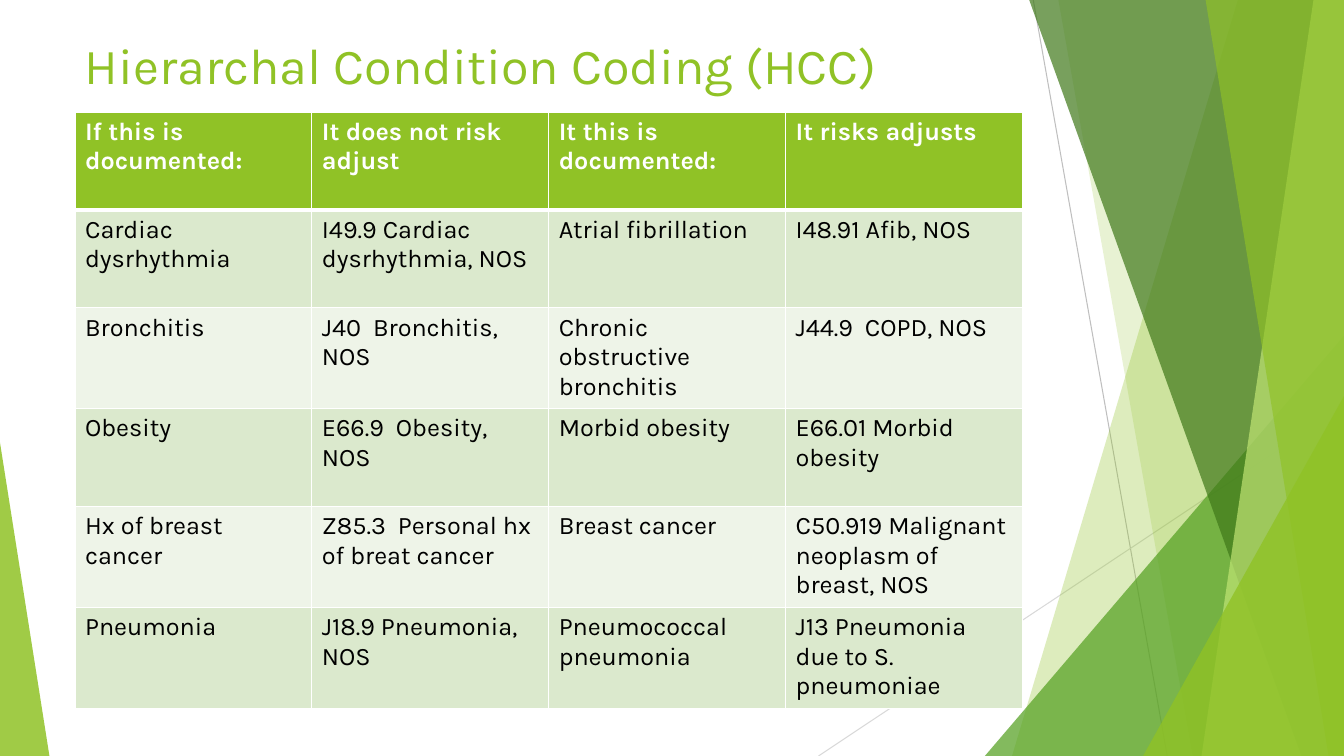
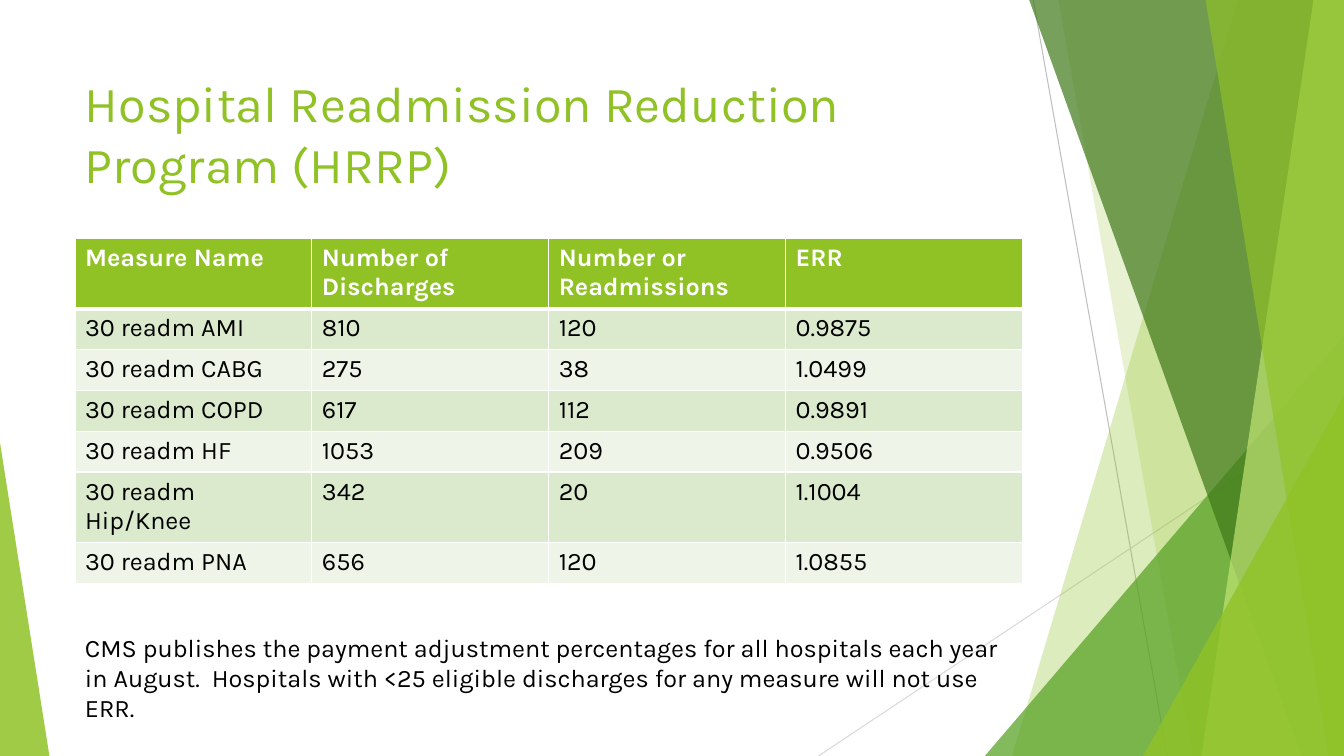
from lxml.etree import SubElement
from pptx import Presentation
from pptx.dml.color import RGBColor
from pptx.enum.shapes import MSO_CONNECTOR, MSO_SHAPE
from pptx.enum.text import MSO_ANCHOR
from pptx.oxml.ns import qn
from pptx.util import Inches, Pt

CODING = [
    ("If this is documented:", "It does not risk adjust", "It this is documented:", "It risks adjusts"),
    ("Cardiac dysrhythmia", "I49.9 Cardiac dysrhythmia, NOS", "Atrial fibrillation", "I48.91 Afib, NOS"),
    ("Bronchitis", "J40  Bronchitis, NOS", "Chronic obstructive bronchitis", "J44.9  COPD, NOS"),
    ("Obesity", "E66.9  Obesity, NOS", "Morbid obesity", "E66.01 Morbid obesity"),
    ("Hx of breast cancer", "Z85.3  Personal hx of breat cancer", "Breast cancer",
     "C50.919 Malignant neoplasm of breast, NOS"),
    ("Pneumonia", "J18.9 Pneumonia, NOS", "Pneumococcal pneumonia", "J13 Pneumonia due to S. pneumoniae"),
]
RATES = [
    ("Measure Name", "Number of Discharges", "Number or Readmissions", "ERR"),
    ("30 readm AMI", "810", "120", "0.9875"),
    ("30 readm CABG", "275", "38", "1.0499"),
    ("30 readm COPD", "617", "112", "0.9891"),
    ("30 readm HF", "1053", "209", "0.9506"),
    ("30 readm Hip/Knee", "342", "20", "1.1004"),
    ("30 readm PNA", "656", "120", "1.0855"),
]
NOTE = ("CMS publishes the payment adjustment percentages for all hospitals each year in August.  "
        "Hospitals with <25 eligible discharges for any measure will not use ERR.")


def tint(code):
    return RGBColor.from_string(code)


def write(frame, text, size=18, color="000000", bold=False, font="Karla"):
    frame.word_wrap = True
    run = frame.paragraphs[0].add_run()
    run.text = text
    run.font.name = font
    run.font.size = Pt(size)
    run.font.bold = bold
    run.font.color.rgb = tint(color)


class Deck:
    lime, leaf, pine, pale, white = "90C226", "54A021", "3F7819", "C0E474", "FFFFFF"
    bands = ("EEF4E8", "DBE9CD")
    left, span = 5.58, 70.5

    def __init__(self):
        self.file = Presentation()
        self.file.slide_width = Inches(13.33)
        self.file.slide_height = Inches(7.5)

    def across(self, share):
        return round(self.file.slide_width * share / 100)

    def down(self, share):
        return round(self.file.slide_height * share / 100)

    def place(self, x, y, wide, high):
        return self.across(x), self.down(y), self.across(wide), self.down(high)

    def page(self, title, top, high):
        self.slide = self.file.slides.add_slide(self.file.slide_layouts[6])
        self.shapes = self.slide.shapes
        self.backdrop()
        self.text(title, top, high, size=36, color=self.lime)

    def backdrop(self):
        self.line(76.88, 0, 86.85, 100, "BFBFBF")
        self.line(100, 53.73, 60.9, 100, "D9D9D9")
        self.shard(92.1, 75.3, self.lime, 30)
        self.shard(78.75, 88.73, self.lime, 20)
        self.wedge(73.28, 44.4, 26.72, self.leaf, 72)
        self.shard(76.58, 96.83, self.pine, 70)
        self.shard(97.73, 89.4, self.pale, 70)
        self.shard(89.7, 98.85, self.lime, 65)
        self.wedge(85.05, 52.4, 14.95, self.lime, 80)
        self.wedge(0, 58.53, 3.68, self.lime, 85, peak=0)

    def line(self, x, y, to_x, to_y, color):
        line = self.shapes.add_connector(
            MSO_CONNECTOR.STRAIGHT, *self.place(x, y, to_x, to_y))
        line.line.color.rgb = tint(color)
        line.line.width = Pt(0.75)
        SubElement(line.element.spPr, qn("a:effectLst"))

    def glaze(self, shape, color, alpha):
        shape.shadow.inherit = False
        shape.fill.solid()
        shape.fill.fore_color.rgb = tint(color)
        shape.line.fill.background()
        shade = next(shape.element.spPr.iter(qn("a:srgbClr")))
        SubElement(shade, qn("a:alpha")).set("val", str(alpha * 1000))

    def shard(self, head, foot, color, alpha):
        start, *rest = [(self.across(x), self.down(y))
                        for x, y in ((head, 0), (100, 0), (100, 100), (foot, 100))]
        path = self.shapes.build_freeform(*start)
        path.add_line_segments(rest, close=True)
        self.glaze(path.convert_to_shape(), color, alpha)

    def wedge(self, x, y, wide, color, alpha, peak=1):
        shape = self.shapes.add_shape(
            MSO_SHAPE.ISOSCELES_TRIANGLE, *self.place(x, y, wide, 100 - y))
        shape.adjustments[0] = peak
        self.glaze(shape, color, alpha)

    def text(self, text, top, high, **style):
        box = self.shapes.add_textbox(*self.place(self.left, top, self.span, high))
        box.text_frame.vertical_anchor = MSO_ANCHOR.TOP
        write(box.text_frame, text, **style)

    def edge(self, cell, side, width):
        line = SubElement(cell._tc.get_or_add_tcPr(), qn("a:ln" + side))
        line.set("w", str(Pt(width)))
        fill = SubElement(line, qn("a:solidFill"))
        SubElement(fill, qn("a:srgbClr")).set("val", self.white)

    def table(self, rows, top, high):
        grid = self.shapes.add_table(
            len(rows), len(rows[0]),
            *self.place(self.left, top, self.span, high * len(rows))).table
        for i, row in enumerate(rows):
            head = i == 0
            sides = {"L": 1, "R": 1, "T": 3 if i == 1 else 1, "B": 3 if head else 1}
            for j, text in enumerate(row):
                cell = grid.cell(i, j)
                for side, width in sides.items():
                    self.edge(cell, side, width)
                cell.fill.solid()
                cell.fill.fore_color.rgb = tint(self.lime if head else self.bands[i % 2])
                write(cell.text_frame, text, bold=head,
                      color=self.white if head else "000000")


def main():
    deck = Deck()
    deck.page("Hierarchal Condition Coding (HCC)", 3.87, 12.93)
    deck.table(CODING, 14.83, 12.95)
    deck.page("Hospital Readmission Reduction Program (HRRP)", 8.93, 19.2)
    deck.table(RATES, 31.5, 5.4)
    deck.text(NOTE, 82.93, 9.47)
    deck.file.save("out.pptx")


if __name__ == "__main__":
    main()
